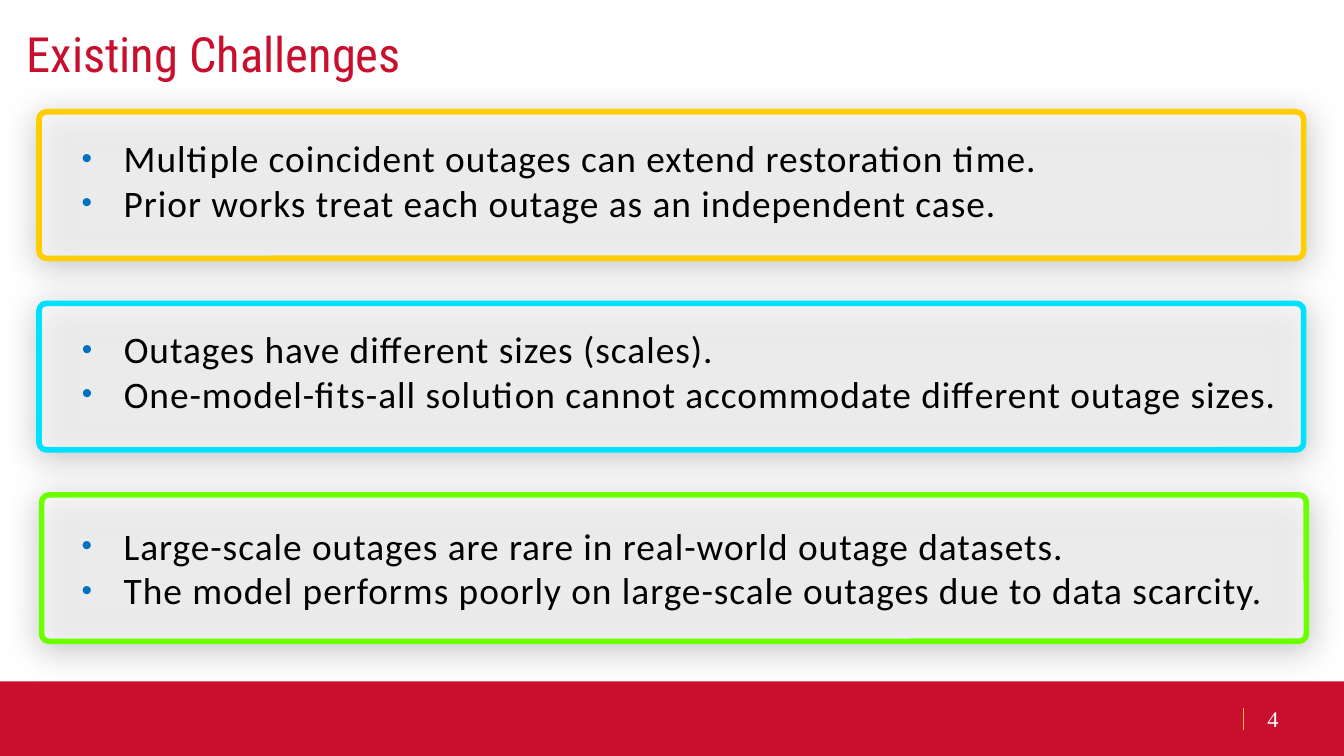
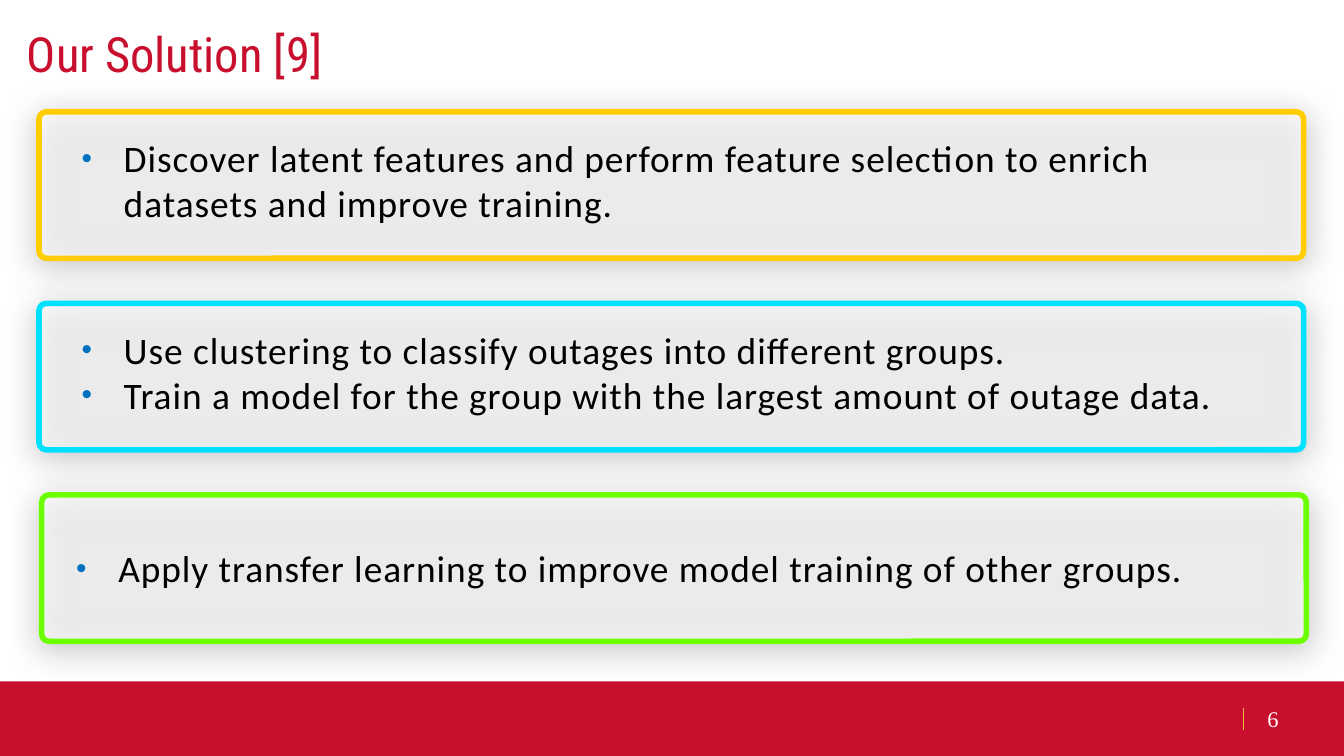
from lxml import etree
from pptx import Presentation
from pptx import util as u
from pptx.dml import color
from pptx.enum import shapes, text
from pptx.oxml import ns, parse_xml

COLORS = {
    "red": "C8102E",
    "gold": "F1BE48",
    "white": "FFFFFF",
    "black": "000000",
    "bullet": "0070C0",
    "yellow_frame": "FFCD00",
    "cyan_frame": "00E0FF",
    "green_frame": "6CFF00",
}
RGB = {name: color.RGBColor.from_string(value) for name, value in COLORS.items()}

TITLE_FONT = {"name": "Roboto Condensed", "size": u.Pt(26), "bold": False}
LIST_FONT = {"name": "Calibri", "size": u.Pt(20)}
NUMBER_FONT = {"name": "Times New Roman", "size": u.Pt(12)}
PLACE = ("left", "top", "width", "height")
TITLE_PLACE = (7.2, 10, 683.3, 36.7)
NUMBER_PLACE = (671.8, 374.4, 41.8, 21.6)
FRAME_TOP, FRAME_PITCH, FRAME_WIDTH, FRAME_HEIGHT = 59.9, 102.6, 677.5, 78.5
FRAMES = [(22.3, "green_frame"), (20.9, "cyan_frame"), (20.9, "yellow_frame")]

SHADOW = f"""<a:effectLst {ns.nsdecls("a")}>
<a:outerShdw blurRad="226060" dist="38100" dir="5220000" algn="ctr" rotWithShape="0">
<a:srgbClr val="{COLORS["black"]}"><a:alpha val="33000"/></a:srgbClr>
</a:outerShdw></a:effectLst>"""
BULLET = f"""<a:pPr {ns.nsdecls("a")}>
<a:buClr><a:srgbClr val="{COLORS["bullet"]}"/></a:buClr>
<a:buSzPct val="80000"/><a:buFont typeface="Arial"/><a:buChar char="•"/>
<a:tabLst><a:tab pos="{u.Pt(10.8)}" algn="l"/></a:tabLst></a:pPr>"""

SLIDES = [
    ("Existing Challenges", "4", [
        ((36.7, 69.1, 652.3, 55.4), [
            "Multiple coincident outages can extend restoration time.",
            "Prior works treat each outage as an independent case.",
        ]),
        ((36.7, 171.4, 668.9, 55.4), [
            "Outages have different sizes (scales).",
            "One-model-fits-all solution cannot accommodate different outage sizes.",
        ]),
        ((36.7, 276.5, 652.3, 55.4), [
            "Large-scale outages are rare in real-world outage datasets.",
            "The model performs poorly on large-scale outages due to data scarcity.",
        ]),
    ]),
    ("Our Solution [9]", "6", [
        ((36.7, 69.1, 652.3, 55.4), [
            "Discover latent features and perform feature selection to enrich "
            "datasets and improve training.",
        ]),
        ((36.7, 171.8, 652.3, 55.4), [
            "Use clustering to classify outages into different groups.",
            "Train a model for the group with the largest amount of outage data.",
        ]),
        ((33.8, 288.7, 652.3, 31.7), [
            "Apply transfer learning to improve model training of other groups.",
        ]),
    ]),
]


def apply_format(target, values):
    for name, value in values.items():
        setattr(target, name, value)


def write(paragraph, words, font, color_name):
    run = paragraph.add_run()
    run.text = words
    apply_format(run.font, font)
    run.font.color.rgb = RGB[color_name]
    return run


presentation = Presentation()
presentation.slide_width, presentation.slide_height = u.Pt(720), u.Pt(405)

for title_words, number, lists in SLIDES:
    slide = presentation.slides.add_slide(presentation.slide_layouts[5])

    title = slide.shapes.title
    apply_format(title, dict(zip(PLACE, map(u.Pt, TITLE_PLACE))))
    apply_format(title.text_frame, {
        "word_wrap": True,
        "auto_size": text.MSO_AUTO_SIZE.NONE,
        "vertical_anchor": text.MSO_ANCHOR.MIDDLE,
    })
    paragraph = title.text_frame.paragraphs[0]
    paragraph.alignment = text.PP_ALIGN.LEFT
    write(paragraph, title_words, TITLE_FONT, "red")

    band = slide.shapes.add_shape(
        shapes.MSO_SHAPE.RECTANGLE, 0, u.Pt(365), u.Pt(720), u.Pt(40))
    band.shadow.inherit = False
    band.fill.solid()
    band.fill.fore_color.rgb = RGB["red"]
    band.line.fill.background()

    divider = slide.shapes.add_connector(
        shapes.MSO_CONNECTOR.STRAIGHT, u.Pt(666), u.Pt(379.4), u.Pt(666), u.Pt(391))
    divider.line.color.rgb = RGB["gold"]
    divider.line.width = u.Pt(0.75)
    etree.SubElement(divider._element.spPr, ns.qn("a:effectLst"))

    number_box = slide.shapes.add_textbox(*map(u.Pt, NUMBER_PLACE))
    apply_format(number_box.text_frame, {
        "word_wrap": True, "vertical_anchor": text.MSO_ANCHOR.MIDDLE})
    write(number_box.text_frame.paragraphs[0], number, NUMBER_FONT, "white")

    for index, (left, frame_color) in enumerate(FRAMES):
        top = FRAME_TOP + FRAME_PITCH * (len(FRAMES) - 1 - index)
        frame = slide.shapes.add_shape(
            shapes.MSO_SHAPE.ROUNDED_RECTANGLE,
            *map(u.Pt, (left, top, FRAME_WIDTH, FRAME_HEIGHT)))
        frame.adjustments[0] = 0.05
        frame.fill.solid()
        frame.fill.fore_color.rgb = RGB["white"]
        fill_color = frame._element.spPr.find(".//" + ns.qn("a:srgbClr"))
        etree.SubElement(fill_color, ns.qn("a:alpha")).set("val", "60000")
        frame.line.color.rgb = RGB[frame_color]
        frame.line.width = u.Pt(3)
        frame._element.spPr.append(parse_xml(SHADOW))

    for place, items in lists:
        list_box = slide.shapes.add_textbox(*map(u.Pt, place))
        frame = list_box.text_frame
        apply_format(frame, {
            "word_wrap": True, "auto_size": text.MSO_AUTO_SIZE.SHAPE_TO_FIT_TEXT})
        for index, item in enumerate(items):
            paragraph = frame.add_paragraph() if index else frame.paragraphs[0]
            paragraph._p.insert(0, parse_xml(BULLET))
            paragraph.level = 2
            properties = paragraph._p.pPr
            properties.set("marL", str(u.Pt(22.5)))
            properties.set("indent", str(-u.Pt(22.5)))
            run = write(paragraph, item, LIST_FONT, "black")
            run._r.get_or_add_rPr().set("spc", "50")

presentation.save("out.pptx")
